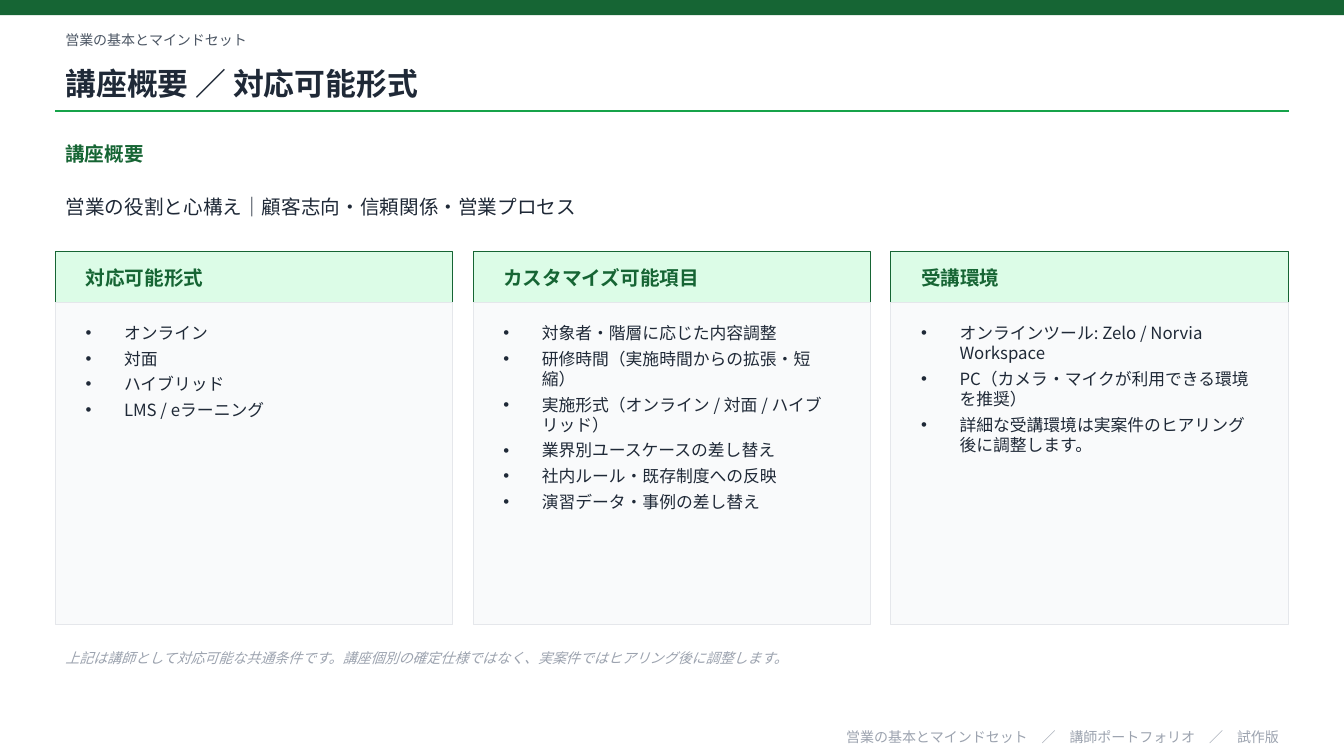
from dataclasses import dataclass

from lxml import etree
from pptx import Presentation
from pptx.dml.color import RGBColor
from pptx.enum.shapes import MSO_CONNECTOR, MSO_SHAPE
from pptx.enum.text import MSO_ANCHOR, MSO_AUTO_SIZE, PP_ALIGN
from pptx.oxml.ns import qn
from pptx.util import Inches, Pt

RECT = MSO_SHAPE.RECTANGLE
LINE = MSO_CONNECTOR.STRAIGHT
TOP, MID = MSO_ANCHOR.TOP, MSO_ANCHOR.MIDDLE
LEFT, RIGHT = PP_ALIGN.LEFT, PP_ALIGN.RIGHT
FIXED = MSO_AUTO_SIZE.NONE


@dataclass(frozen=True)
class Theme:
    font: str = "Noto Sans CJK JP"
    green: str = "166534"
    rule: str = "16A34A"
    mint: str = "DCFCE7"
    panel: str = "F9FAFB"
    edge: str = "E5E7EB"
    ink: str = "1F2937"
    gray: str = "4B5563"
    pale: str = "9CA3AF"
    title: int = 22
    head: int = 14
    body: int = 12
    small: int = 10


class Deck:
    """Holds the theme and slide; places parts on three columns and 0.1 inch rows."""
    wide, high = 13.33, 7.5
    edge, gap, row = 0.55, 0.2, 0.1
    full = wide - 2 * edge
    col = (full - 2 * gap) / 3

    def __init__(self, theme):
        self.theme = theme
        self.file = Presentation()
        self.file.slide_width = Inches(self.wide)
        self.file.slide_height = Inches(self.high)
        self.slide = self.file.slides.add_slide(self.file.slide_layouts[4])
        self.shapes = self.slide.shapes
        self.slots = {s.placeholder_format.idx: s for s in self.slide.placeholders}

    def area(self, top, rows, col=None, pad=0):
        """Box at a row; spans the full width unless a column is given."""
        left = self.edge + (col or 0) * (self.col + self.gap) + pad
        width = (self.full if col is None else self.col) - pad
        if col is not None:
            width -= pad
        return [Inches(n) for n in (left, top * self.row, width, rows * self.row)]

    def rect(self, box, fill, line=None):
        shape = self.shapes.add_shape(RECT, *box)
        shape.shadow.inherit = False
        shape.fill.solid()
        shape.fill.fore_color.rgb = RGBColor.from_string(fill)
        if line:
            shape.line.color.rgb = RGBColor.from_string(line)
            shape.line.width = Pt(0.75)
        else:
            shape.line.fill.background()

    def rule(self, top):
        left, y, width, _ = self.area(top, 0)
        line = self.shapes.add_connector(LINE, left, y, left + width, y)
        line.line.color.rgb = RGBColor.from_string(self.theme.rule)
        line.line.width = Pt(1)
        etree.SubElement(line.element.spPr, qn("a:effectLst"))

    def text(self, box, words, size, color, slot=None, anchor=MID,
             align=LEFT, after=0, mark=None, **style):
        """Fill a placeholder, or a new text box when no slot is given."""
        if slot is None:
            shape = self.shapes.add_textbox(*box)
        else:
            shape = self.slots[slot]
            shape.element.getparent().append(shape.element)
            shape.left, shape.top, shape.width, shape.height = box
        frame = shape.text_frame
        form = {"word_wrap": True, "auto_size": FIXED, "vertical_anchor": anchor}
        for key, value in form.items():
            setattr(frame, key, value)
        frame.text = "\n".join(words)
        look = {"name": self.theme.font, "size": Pt(size),
                "bold": False, "italic": False, **style}
        flow = {"alignment": align, "space_before": Pt(0),
                "space_after": Pt(after), "line_spacing": 1.0}
        for para in frame.paragraphs:
            for key, value in flow.items():
                setattr(para, key, value)
            self.bullet(para, mark)
            run = para.runs[0]
            for key, value in look.items():
                setattr(run.font, key, value)
            run.font.color.rgb = RGBColor.from_string(color)
            east = etree.SubElement(run.font.fill._xPr, qn("a:ea"))
            east.set("typeface", self.theme.font)

    def bullet(self, para, mark):
        props = para._p.get_or_add_pPr()
        dent = Inches(0.38) if mark else 0
        props.set("marL", str(dent))
        props.set("indent", str(-dent))
        if mark:
            etree.SubElement(props, qn("a:buFont")).set("typeface", "Arial")
            etree.SubElement(props, qn("a:buChar")).set("char", mark)
        else:
            etree.SubElement(props, qn("a:buNone"))

    def card(self, col, head, items):
        t = self.theme
        self.rect(self.area(25, 5, col), t.mint, t.green)
        self.text(self.area(25, 5, col, 0.2), [head], t.head, t.green, bold=True)
        self.rect(self.area(30, 32, col), t.panel, t.edge)
        self.text(self.area(31.5, 28.5, col, 0.2), items, t.body, t.ink,
                  slot=col + 2, anchor=TOP, after=4, mark="•")


CARDS = [
    ("対応可能形式", ["オンライン", "対面", "ハイブリッド", "LMS / eラーニング"]),
    ("カスタマイズ可能項目", [
        "対象者・階層に応じた内容調整",
        "研修時間（実施時間からの拡張・短縮）",
        "実施形式（オンライン / 対面 / ハイブリッド）",
        "業界別ユースケースの差し替え",
        "社内ルール・既存制度への反映",
        "演習データ・事例の差し替え",
    ]),
    ("受講環境", [
        "オンラインツール: Zelo / Norvia Workspace",
        "PC（カメラ・マイクが利用できる環境を推奨）",
        "詳細な受講環境は実案件のヒアリング後に調整します。",
    ]),
]
COURSE = "営業の基本とマインドセット"
NOTE = ("上記は講師として対応可能な共通条件です。"
        "講座個別の確定仕様ではなく、実案件ではヒアリング後に調整します。")


def main():
    t = Theme()
    deck = Deck(t)

    # Header
    deck.rect((0, 0, Inches(deck.wide), Inches(0.15)), t.green)
    deck.text(deck.area(2.5, 3), [COURSE], t.small, t.gray)
    deck.text(deck.area(5.5, 5.5), ["講座概要 ／ 対応可能形式"], t.title, t.ink,
              slot=0, bold=True)
    deck.rule(11)

    # Overview
    deck.text(deck.area(13.5, 3.5), ["講座概要"], t.head, t.green, bold=True)
    deck.text(deck.area(17.5, 6),
              ["営業の役割と心構え｜顧客志向・信頼関係・営業プロセス"],
              t.head, t.ink, slot=1)

    # Cards
    for col, (head, items) in enumerate(CARDS):
        deck.card(col, head, items)

    # Note and footer
    deck.text(deck.area(63.5, 3.5), [NOTE], t.small, t.pale, italic=True)
    foot = "　／　".join([COURSE, "講師ポートフォリオ", "試作版"])
    deck.text(deck.area(72, 2.2), [foot], t.small, t.pale, align=RIGHT)

    deck.file.save("out.pptx")


if __name__ == "__main__":
    main()
